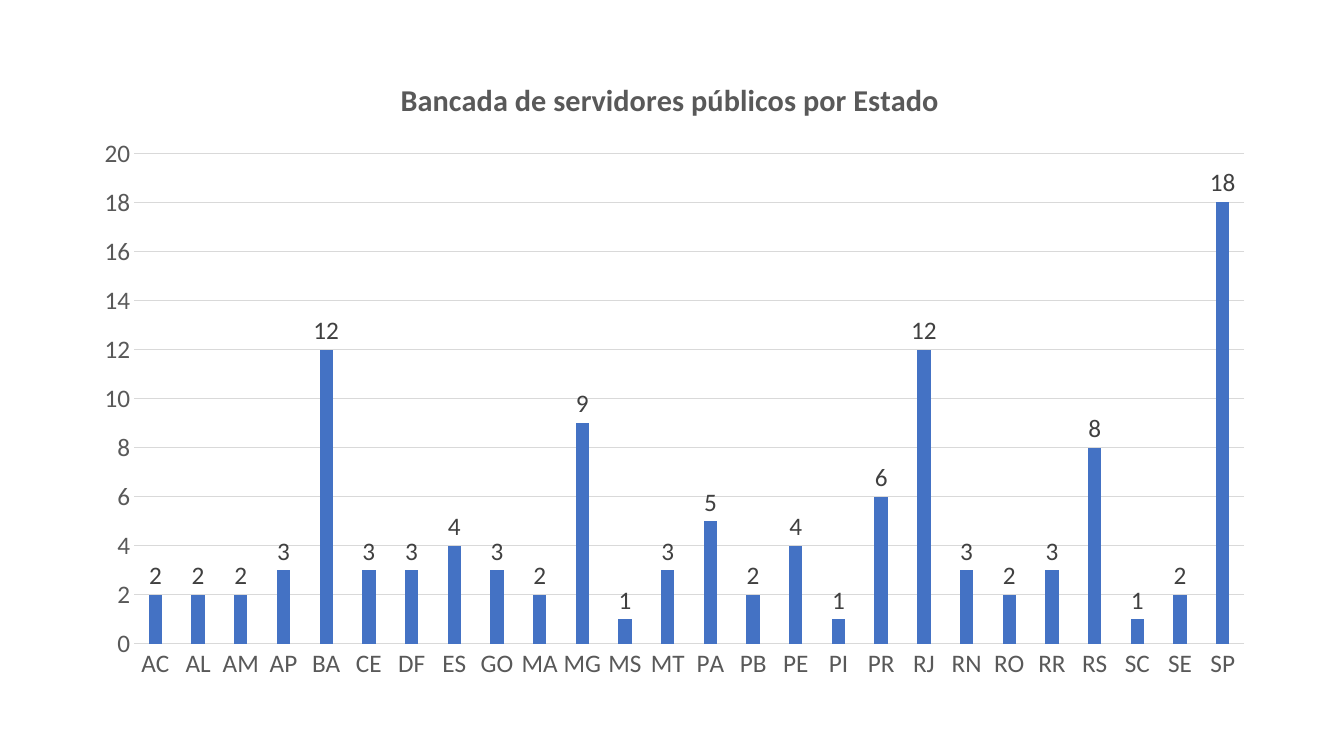
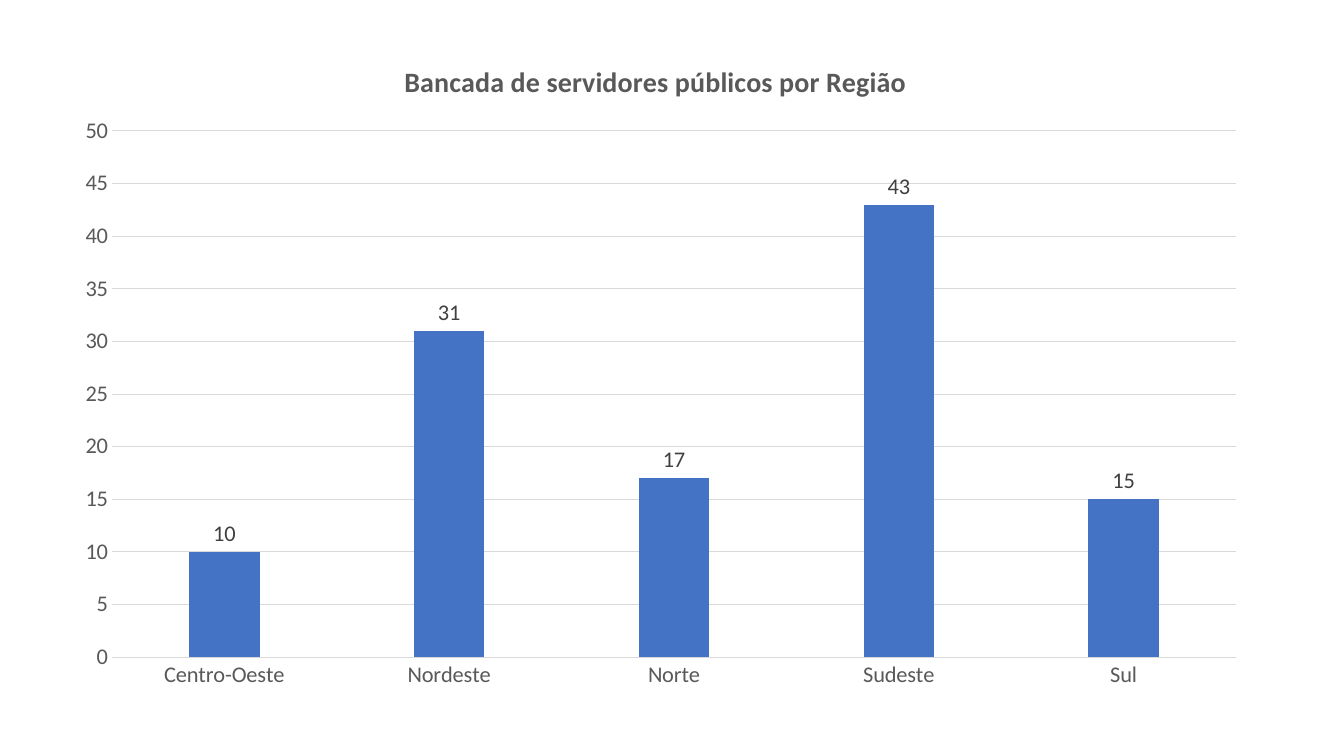
import pptx
import pptx.chart.data
import pptx.dml.color
import pptx.enum.chart
import pptx.oxml
import pptx.oxml.ns
import pptx.util

BLUE = pptx.dml.color.RGBColor(0x44, 0x72, 0xC4)
GRAY = pptx.dml.color.RGBColor(0x59, 0x59, 0x59)
DARK = pptx.dml.color.RGBColor(0x40, 0x40, 0x40)
RULE = pptx.dml.color.RGBColor(0xD9, 0xD9, 0xD9)
FONT = "Calibri"
CELL = pptx.util.Inches(0.1)

STATES = {
    "AC": 2, "AL": 2, "AM": 2, "AP": 3, "BA": 12, "CE": 3, "DF": 3,
    "ES": 4, "GO": 3, "MA": 2, "MG": 9, "MS": 1, "MT": 3, "PA": 5,
    "PB": 2, "PE": 4, "PI": 1, "PR": 6, "RJ": 12, "RN": 3, "RO": 2,
    "RR": 3, "RS": 8, "SC": 1, "SE": 2, "SP": 18,
}
REGIONS = {"Centro-Oeste": 10, "Nordeste": 31, "Norte": 17, "Sudeste": 43, "Sul": 15}


class Deck:
    """Chart slides in one style, placed on a grid of tenth-inch cells."""

    def __init__(self):
        self.prs = pptx.Presentation()
        self.prs.slide_width = pptx.util.Inches(13.33)
        self.prs.slide_height = pptx.util.Inches(7.5)
        self.slide = None

    def add_slide(self):
        self.slide = self.prs.slides.add_slide(self.prs.slide_layouts[6])

    def style_font(self, font, size, color, bold=False):
        font.name = FONT
        font.size = pptx.util.Pt(size)
        font.color.rgb = color
        font.bold = bold

    def style_line(self, line):
        line.color.rgb = RULE
        line.width = pptx.util.Pt(0.75)

    def set_layout(self, parent, index, values):
        for old in parent.findall(pptx.oxml.ns.qn("c:layout")):
            parent.remove(old)
        inner = '<c:layoutTarget val="inner"/>' if "w" in values else ""
        modes = "".join(f'<c:{k}Mode val="edge"/>' for k in ("x", "y"))
        sizes = "".join(f'<c:{k} val="{v:.4f}"/>' for k, v in values.items())
        parent.insert(index, pptx.oxml.parse_xml(
            f'<c:layout {pptx.oxml.ns.nsdecls("c")}><c:manualLayout>'
            f"{inner}{modes}{sizes}</c:manualLayout></c:layout>"))

    def add_title(self, chart, text, size, corner):
        title = chart.chart_title
        r = title.text_frame.paragraphs[0].add_run()
        r.text = text
        self.style_font(r.font, size, GRAY, bold=True)
        title.include_in_layout = False
        self.set_layout(title.element, 1, corner)

    def style_axes(self, chart, size, top, step):
        for axis in (chart.category_axis, chart.value_axis):
            axis.major_tick_mark = pptx.enum.chart.XL_TICK_MARK.NONE
            axis.minor_tick_mark = pptx.enum.chart.XL_TICK_MARK.NONE
            self.style_font(axis.tick_labels.font, size, GRAY)
        chart.category_axis.has_major_gridlines = False
        self.style_line(chart.category_axis.format.line)
        values = chart.value_axis
        values.minimum_scale, values.maximum_scale, values.major_unit = 0, top, step
        values.has_major_gridlines = True
        self.style_line(values.major_gridlines.format.line)
        values.format.line.fill.background()

    def style_columns(self, chart, size):
        plot = chart.plots[0]
        plot.gap_width = 219
        plot.overlap = -27
        plot.vary_by_categories = False
        series = plot.series[0]
        series.format.fill.solid()
        series.format.fill.fore_color.rgb = BLUE
        labels = series.data_labels
        labels.show_value = True
        labels.position = pptx.enum.chart.XL_LABEL_POSITION.OUTSIDE_END
        self.style_font(labels.font, size, DARK)

    def add_columns(self, title, counts, frame, plot, title_at, size, title_size, top, step):
        data = pptx.chart.data.CategoryChartData()
        data.categories = list(counts)
        data.add_series("Series 1", list(counts.values()))
        chart = self.slide.shapes.add_chart(
            pptx.enum.chart.XL_CHART_TYPE.COLUMN_CLUSTERED,
            *(round(n * CELL) for n in frame), data).chart
        chart.has_legend = False
        chart.font.name = FONT
        chart.font.size = pptx.util.Pt(size)
        left, upper, width, height = frame

        def share(x, y):
            return {"x": (x - left) / width, "y": (y - upper) / height}

        self.add_title(chart, title, title_size, share(*title_at))
        self.style_axes(chart, size, top, step)
        self.style_columns(chart, size)
        area = share(*plot[:2]) | {"w": plot[2] / width, "h": plot[3] / height}
        self.set_layout(chart.element.chart.plotArea, 0, area)


def main():
    deck = Deck()
    deck.add_slide()
    deck.add_columns(
        "Bancada de servidores públicos por Estado", STATES,
        frame=(8.1, 5, 117.7, 63.6), plot=(13.3, 15.2, 110.1, 48.7),
        title_at=(39.2, 7.2), size=18, title_size=21.6, top=20, step=2)
    deck.add_slide()
    deck.add_columns(
        "Bancada de servidores públicos por Região", REGIONS,
        frame=(6.1, 3.4, 118.8, 66.2), plot=(11.1, 13, 111.5, 52.2),
        title_at=(39.6, 5.6), size=16, title_size=20, top=50, step=5)
    deck.prs.save("out.pptx")


if __name__ == "__main__":
    main()
